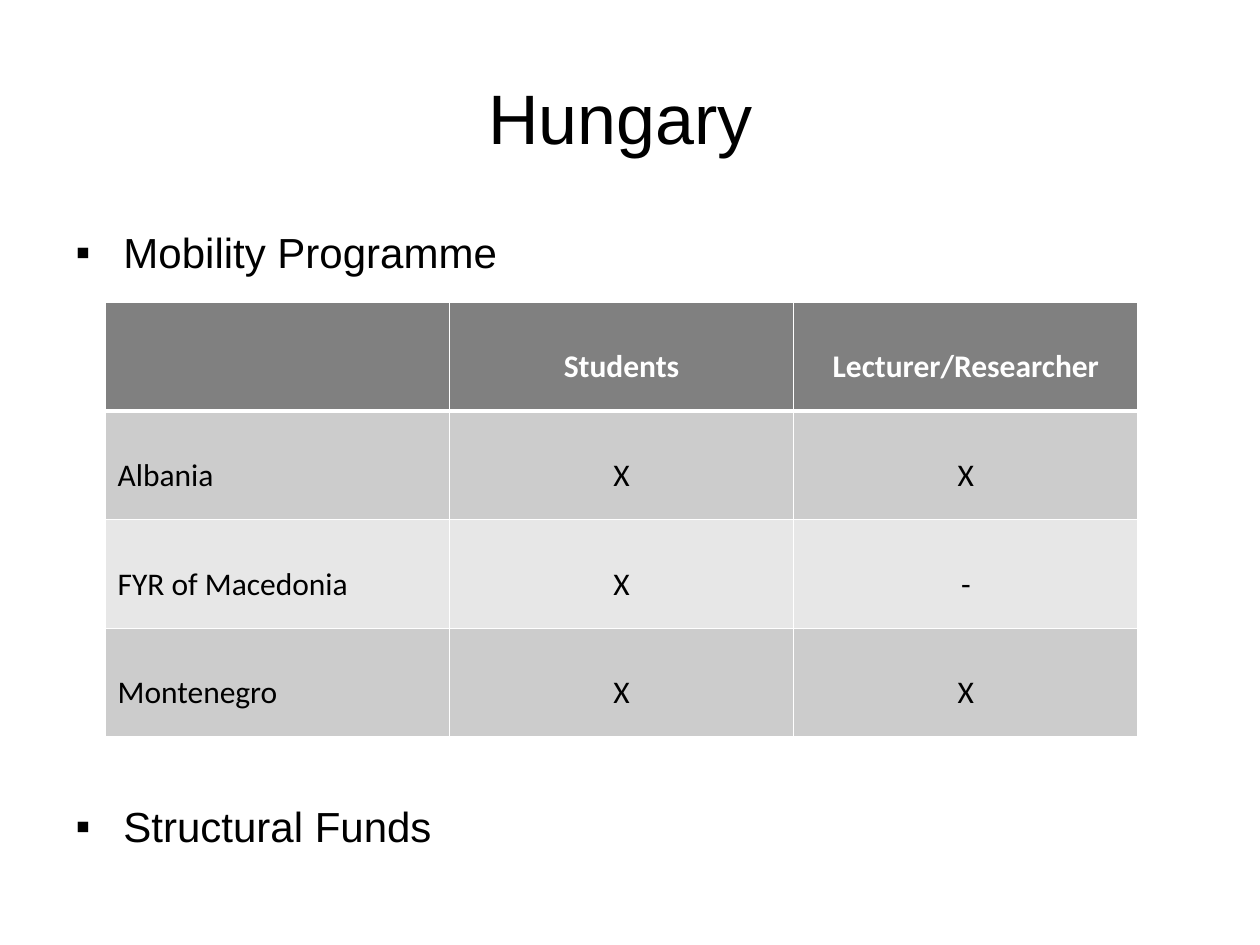
from lxml import etree
from pptx import Presentation, util as u
from pptx.dml.color import RGBColor
from pptx.enum import text
from pptx.oxml import ns

HUES = {"ink": "000000", "paper": "FFFFFF", "head": "808080",
        "odd": "CCCCCC", "even": "E7E7E7"}
FONTS = {
    "title": {"name": "Arial", "size": u.Pt(40), "bold": False},
    "list": {"name": "Arial", "size": u.Pt(24), "bold": False},
    "head": {"name": "Calibri", "size": u.Pt(18), "bold": True},
    "cell": {"name": "Calibri", "size": u.Pt(18), "bold": False},
}
FRAME = {"word_wrap": True, "auto_size": text.MSO_AUTO_SIZE.NONE}
ITEMS = [("Mobility Programme", 12), ("Structural Funds", 299)]
ROWS = [
    ["", "Students", "Lecturer/Researcher"],
    ["Albania", "X", "X"],
    ["FYR of Macedonia", "X", "-"],
    ["Montenegro", "X", "X"],
]


def apply(obj, vals):
    for key, val in vals.items():
        setattr(obj, key, val)


class Deck:
    def __init__(self):
        self.prs = Presentation()
        apply(self.prs, {"slide_width": u.Inches(10), "slide_height": u.Inches(7.5)})
        self.slide = self.prs.slides.add_slide(self.prs.slide_layouts[1])

    def hue(self, name):
        return RGBColor.from_string(HUES[name])

    def box(self, left, top, wide, high):
        w, h = self.prs.slide_width, self.prs.slide_height
        return {"left": int(left * w), "top": int(top * h),
                "width": int(wide * w), "height": int(high * h)}

    def label(self, para, words, font, hue="ink"):
        run = para.add_run()
        run.text = words
        apply(run.font, FONTS[font])
        run.font.color.rgb = self.hue(hue)

    def title(self, words, *place):
        shape = self.slide.shapes.title
        apply(shape, self.box(*place))
        apply(shape.text_frame, FRAME)
        shape.text_frame.vertical_anchor = text.MSO_ANCHOR.MIDDLE
        para = shape.text_frame.paragraphs[0]
        para.alignment = text.PP_ALIGN.CENTER
        self.label(para, words, "title")

    def bullets(self, items, *place):
        shape = self.slide.placeholders[1]
        apply(shape, self.box(*place))
        frame = shape.text_frame
        apply(frame, FRAME)
        for i, (words, gap) in enumerate(items):
            para = frame.add_paragraph() if i else frame.paragraphs[0]
            para.space_before = u.Pt(gap)
            self.label(para, words, "list")
            props = para._p.get_or_add_pPr()
            props.set("marL", str(u.Inches(0.38)))
            props.set("indent", str(-u.Inches(0.38)))
            etree.SubElement(props, ns.qn("a:buFont")).set("typeface", "Arial")
            etree.SubElement(props, ns.qn("a:buChar")).set("char", "▪")

    def edge(self, cell, side, width):
        line = etree.SubElement(cell._tc.get_or_add_tcPr(), ns.qn("a:ln" + side))
        line.set("w", str(u.Pt(width)))
        fill = etree.SubElement(line, ns.qn("a:solidFill"))
        etree.SubElement(fill, ns.qn("a:srgbClr")).set("val", HUES["paper"])

    def table(self, rows, *place):
        grid = self.slide.shapes.add_table(
            len(rows), len(rows[0]), **self.box(*place)).table
        for r, row in enumerate(rows):
            band = "head" if r == 0 else "odd" if r % 2 else "even"
            thick = {"T": 3 if r == 1 else 1, "B": 3 if r == 0 else 1}
            for c, words in enumerate(row):
                cell = grid.cell(r, c)
                for side in "LRTB":
                    self.edge(cell, side, thick.get(side, 1))
                cell.fill.solid()
                cell.fill.fore_color.rgb = self.hue(band)
                cell.margin_top = u.Inches(0.36)
                para = cell.text_frame.paragraphs[0]
                if r == 0 or c:
                    para.alignment = text.PP_ALIGN.CENTER
                if words:
                    self.label(para, words, *(("cell", "ink") if r else ("head", "paper")))


def main():
    deck = Deck()
    deck.title("Hungary ", 0.05, 0.04, 0.9, 1 / 6)
    deck.bullets(ITEMS, 0.05, 0.7 / 3, 0.9, 0.66)
    deck.table(ROWS, 1 / 12, 0.32, 0.82, 0.46)
    deck.prs.save("out.pptx")


if __name__ == "__main__":
    main()
